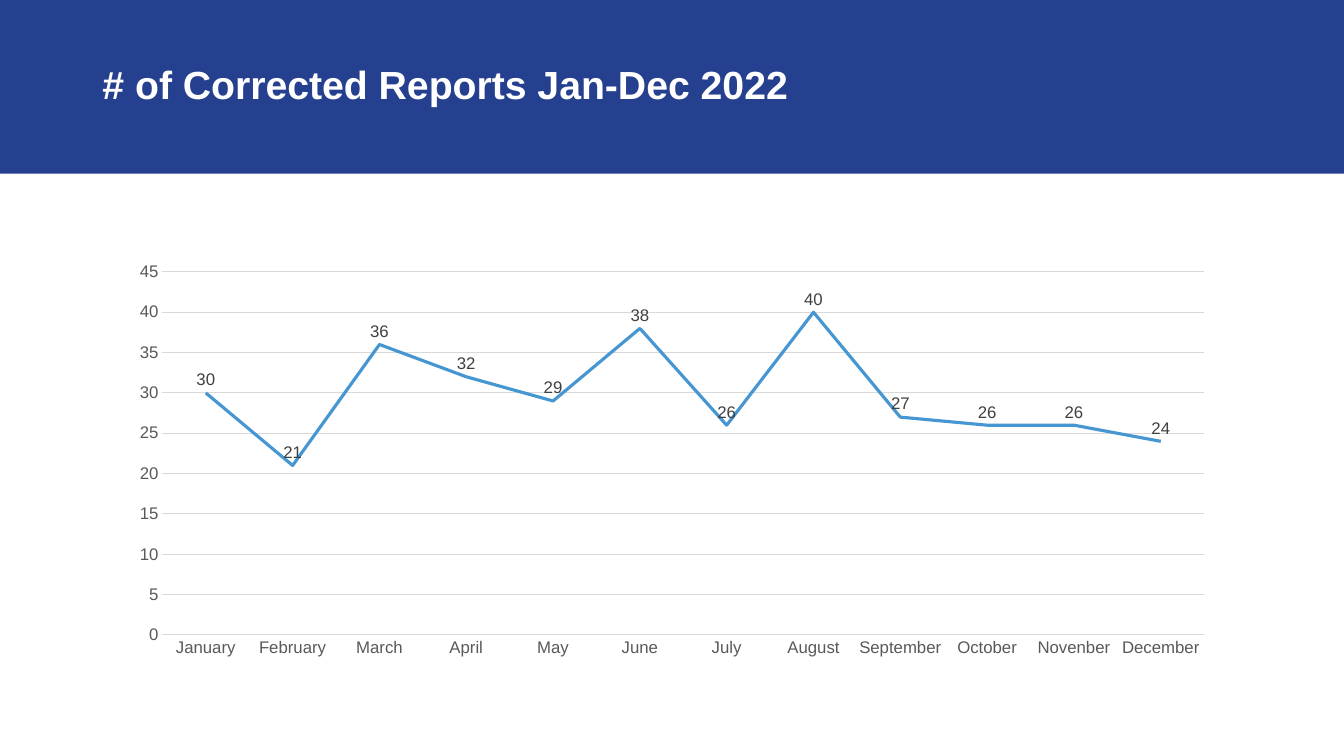
import pptx
import pptx.util
import pptx.dml.color
import pptx.chart.data
import pptx.enum.chart
import pptx.enum.shapes
import pptx.enum.text

Pt = pptx.util.Pt
RGBColor = pptx.dml.color.RGBColor

HEADLINE = "# of Corrected Reports Jan-Dec 2022"
SERIES_NAME = "Series 1"
CORRECTED_REPORTS = {
    "January": 30, "February": 21, "March": 36, "April": 32,
    "May": 29, "June": 38, "July": 26, "August": 40,
    "September": 27, "October": 26, "Novenber": 26, "December": 24,
}

FONT = "Arial"
NAVY = RGBColor(0x25, 0x40, 0x8F)
BLUE = RGBColor(0x46, 0x96, 0xD2)
WHITE = RGBColor(0xFF, 0xFF, 0xFF)
BLACK = RGBColor(0, 0, 0)
AXIS_GREY = RGBColor(0x59, 0x59, 0x59)
LABEL_GREY = RGBColor(0x40, 0x40, 0x40)
GRID_GREY = RGBColor(0xD9, 0xD9, 0xD9)

SLIDE_WIDTH, SLIDE_HEIGHT = Pt(960), Pt(540)
BAND_HEIGHT = Pt(124)
TITLE_BOX = Pt(66), Pt(10), Pt(828), Pt(104.4)
CHART_BOX = Pt(84), Pt(182), Pt(792), Pt(293)


def style_font(font, size, color, bold=False):
    font.name = FONT
    font.size = Pt(size)
    font.bold = bold
    font.color.rgb = color


def style_line(line, color, width):
    line.color.rgb = color
    line.width = Pt(width)


def add_header(slide):
    title = slide.shapes.title
    title.left, title.top, title.width, title.height = TITLE_BOX
    frame = title.text_frame
    frame.word_wrap = True
    frame.vertical_anchor = pptx.enum.text.MSO_ANCHOR.MIDDLE
    paragraph = frame.paragraphs[0]
    paragraph.alignment = pptx.enum.text.PP_ALIGN.LEFT
    paragraph.line_spacing = 0.9
    headline = paragraph.add_run()
    headline.text = HEADLINE
    style_font(headline.font, 28, WHITE, bold=True)

    band = slide.shapes.add_shape(
        pptx.enum.shapes.MSO_SHAPE.RECTANGLE, 0, 0, SLIDE_WIDTH, BAND_HEIGHT)
    band.shadow.inherit = False
    band.fill.solid()
    band.fill.fore_color.rgb = NAVY
    band.line.fill.background()
    title.element.addprevious(band.element)


def add_reports_chart(slide):
    data = pptx.chart.data.CategoryChartData()
    data.categories = list(CORRECTED_REPORTS)
    data.add_series(SERIES_NAME, list(CORRECTED_REPORTS.values()))
    chart = slide.shapes.add_chart(
        pptx.enum.chart.XL_CHART_TYPE.LINE, *CHART_BOX, data).chart
    chart.has_title = False
    chart.has_legend = False
    style_font(chart.font, 10, BLACK)

    months, counts = chart.category_axis, chart.value_axis
    for axis in (months, counts):
        axis.major_tick_mark = pptx.enum.chart.XL_TICK_MARK.NONE
        axis.minor_tick_mark = pptx.enum.chart.XL_TICK_MARK.NONE
        style_font(axis.tick_labels.font, 12, AXIS_GREY)
    style_line(months.format.line, GRID_GREY, 0.75)
    counts.format.line.fill.background()
    counts.minimum_scale, counts.maximum_scale, counts.major_unit = 0, 45, 5
    counts.has_major_gridlines = True
    style_line(counts.major_gridlines.format.line, GRID_GREY, 0.75)

    plot = chart.plots[0]
    plot.vary_by_categories = False
    reports = plot.series[0]
    reports.smooth = False
    reports.marker.style = pptx.enum.chart.XL_MARKER_STYLE.NONE
    style_line(reports.format.line, BLUE, 2.25)
    labels = reports.data_labels
    labels.show_value = True
    labels.position = pptx.enum.chart.XL_LABEL_POSITION.ABOVE
    style_font(labels.font, 12, LABEL_GREY)


deck = pptx.Presentation()
deck.slide_width, deck.slide_height = SLIDE_WIDTH, SLIDE_HEIGHT
slide = deck.slides.add_slide(deck.slide_layouts.get_by_name("Title Only"))
add_header(slide)
add_reports_chart(slide)
deck.save("out.pptx")
